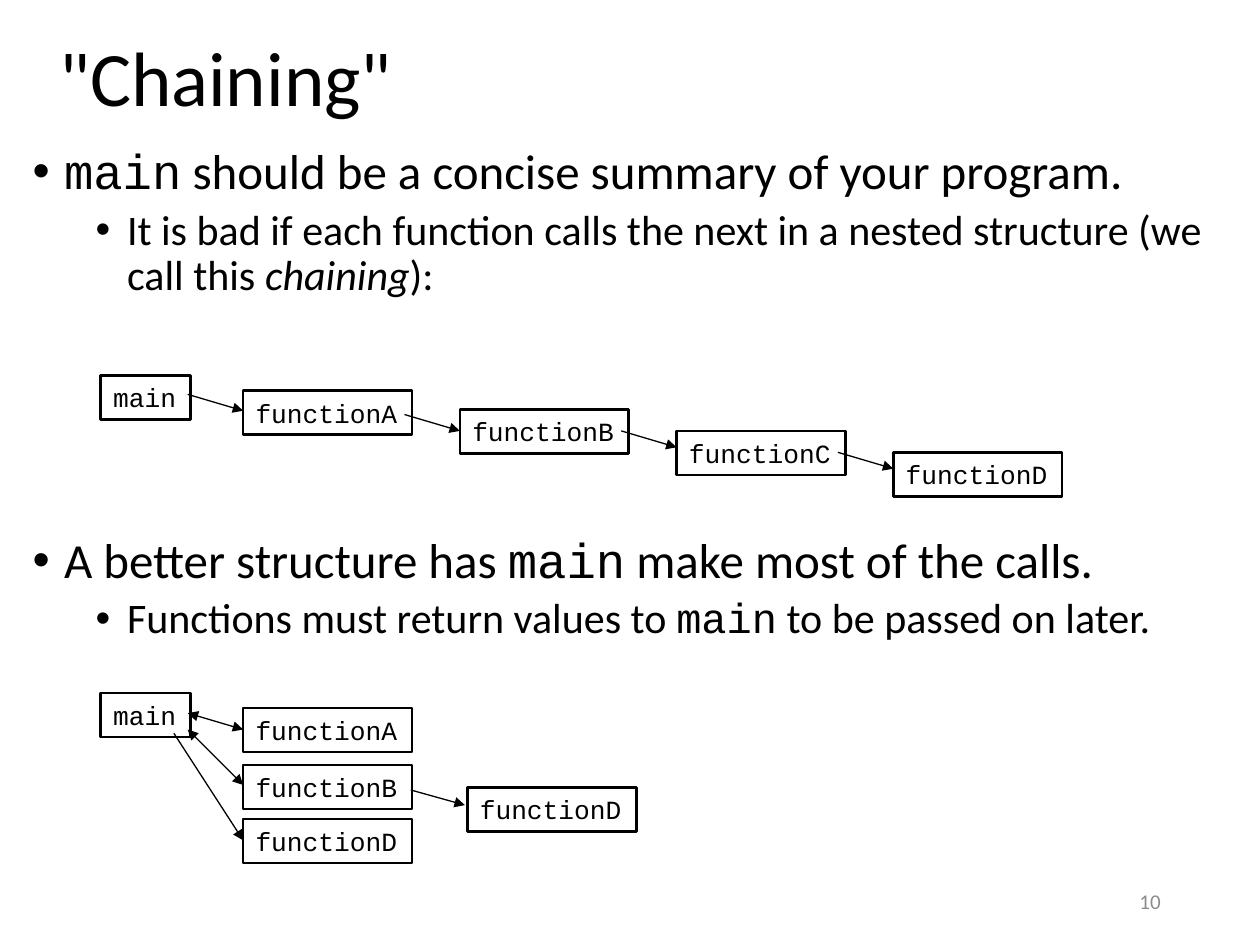
from dataclasses import dataclass

from lxml.etree import SubElement
from pptx import Presentation
from pptx.dml.color import RGBColor
from pptx.enum.shapes import MSO_CONNECTOR, MSO_SHAPE
from pptx.enum.text import MSO_ANCHOR, MSO_AUTO_SIZE, PP_ALIGN
from pptx.oxml.ns import qn
from pptx.util import Inches, Pt


@dataclass(frozen=True)
class Theme:
    ink: RGBColor = RGBColor(0, 0, 0)
    muted: RGBColor = RGBColor(0x8C, 0x8C, 0x8C)
    font: str = "Calibri"
    code_font: str = "Courier New"
    title: int = 44
    levels: tuple = (28, 24)
    code: int = 15
    number: int = 12


@dataclass(frozen=True)
class Box:
    left: float
    top: float
    width: float = 0
    height: float = 0

    def inches(self):
        return [Inches(v) for v in (self.left, self.top, self.width, self.height)]

    def point(self, across, down):
        return self.left + across, self.top + down


THEME = Theme()
NODE_HEIGHT = 0.35
MAIN_WIDTH, FUNCTION_WIDTH = 0.71, 1.34
ARROW_ACROSS, ARROW_DOWN = 0.44, 0.13
FUNCTION_COLUMN = 1.13

# Each paragraph: level, space before, spans of (text, style)
BULLETS = [
    (0, 10, [("main", "code"), (" should be a concise summary of your program.", "")]),
    (1, 5, [("It is bad if each function calls the next in a nested structure "
             "(we call this ", ""), ("chaining", "italic"), ("):", "")]),
    (0, 135, [("A better structure has ", ""), ("main", "code"),
              (" make most of the calls.", "")]),
    (1, 5, [("Functions must return values to ", ""), ("main", "code"),
            (" to be passed on later.", "")]),
]

# Name, left and top of the node, height of the arrow tip that enters it
CHAIN = [
    ("functionA", FUNCTION_COLUMN, 0.12, 0.28),
    ("functionB", 2.85, 0.27, 0.44),
    ("functionC", 4.57, 0.44, 0.57),
    ("functionD", 6.29, 0.61, 0.74),
]

HUB_NODES = [
    ("functionA", FUNCTION_COLUMN, 0.12),
    ("functionB", FUNCTION_COLUMN, 0.57),
    ("functionD", 2.91, 0.75),
    ("functionD", FUNCTION_COLUMN, 1.0),
]

# Start, end, whether the call also returns a value
HUB_CALLS = [
    ((0.69, 0.16), (FUNCTION_COLUMN, 0.29), True),
    ((0.69, 0.29), (FUNCTION_COLUMN, 0.73), True),
    ((2.46, 0.77), (2.89, 0.89), False),
    ((0.58, 0.32), (FUNCTION_COLUMN, 1.17), False),
]


def format_font(font, size, name=THEME.font, color=THEME.ink):
    font.size = Pt(size)
    font.name = name
    font.color.rgb = color


def add_title(slide, box, text):
    title = slide.shapes.title
    title.left, title.top, title.width, title.height = box.inches()
    frame = title.text_frame
    frame.text = text
    frame.vertical_anchor = MSO_ANCHOR.MIDDLE
    para = frame.paragraphs[0]
    para.alignment = PP_ALIGN.LEFT
    para.line_spacing = 0.9
    format_font(para.runs[0].font, THEME.title)


def set_bullet(para, level):
    properties = para._p.get_or_add_pPr()
    properties.set("marL", str(Inches(0.25 + 0.5 * level)))
    properties.set("indent", str(Inches(-0.25)))
    SubElement(properties, qn("a:buFont"), typeface="Arial")
    SubElement(properties, qn("a:buChar"), char="•")


def add_bullets(slide, box, bullets):
    frame = slide.shapes.add_textbox(*box.inches()).text_frame
    frame.word_wrap = True
    for index, (level, space, spans) in enumerate(bullets):
        para = frame.add_paragraph() if index else frame.paragraphs[0]
        para.level = level
        para.line_spacing = 0.9
        para.space_before = Pt(space)
        set_bullet(para, level)
        for text, style in spans:
            span = para.add_run()
            span.text = text
            name = THEME.code_font if style == "code" else THEME.font
            format_font(span.font, THEME.levels[level], name)
            span.font.italic = style == "italic"


def add_node(slide, name, left, top):
    width = MAIN_WIDTH if name == "main" else FUNCTION_WIDTH
    box = Box(left, top, width, NODE_HEIGHT)
    node = slide.shapes.add_shape(MSO_SHAPE.RECTANGLE, *box.inches())
    node.shadow.inherit = False
    node.fill.background()
    node.line.color.rgb = THEME.ink
    node.line.width = Pt(1.5)
    frame = node.text_frame
    frame.text = name
    frame.word_wrap = False
    frame.auto_size = MSO_AUTO_SIZE.SHAPE_TO_FIT_TEXT
    frame.vertical_anchor = MSO_ANCHOR.TOP
    para = frame.paragraphs[0]
    para.alignment = PP_ALIGN.LEFT
    para.space_before = Pt(3.8)
    format_font(para.runs[0].font, THEME.code, THEME.code_font)


def add_arrow(slide, start, end, both_ways=False):
    ends = [Inches(v) for v in (*start, *end)]
    arrow = slide.shapes.add_connector(MSO_CONNECTOR.STRAIGHT, *ends)
    arrow.line.color.rgb = THEME.ink
    arrow.line.width = Pt(0.75)
    line = arrow.line._get_or_add_ln()
    if both_ways:
        SubElement(line, qn("a:headEnd"), type="triangle")
    SubElement(line, qn("a:tailEnd"), type="triangle")
    SubElement(arrow._element.spPr, qn("a:effectLst"))


def add_chain(slide, box):
    """Each function calls the next one."""
    add_node(slide, "main", *box.point(0, 0))
    for name, left, top, tip in CHAIN:
        start = box.point(left - ARROW_ACROSS, tip - ARROW_DOWN)
        add_arrow(slide, start, box.point(left, tip))
        add_node(slide, name, *box.point(left, top))


def add_hub(slide, box):
    """main makes most of the calls."""
    add_node(slide, "main", *box.point(0, 0))
    for (name, left, top), (start, end, returns) in zip(HUB_NODES, HUB_CALLS):
        add_arrow(slide, box.point(*start), box.point(*end), returns)
        add_node(slide, name, *box.point(left, top))


def add_number(slide, box, text):
    frame = slide.shapes.add_textbox(*box.inches()).text_frame
    frame.word_wrap = True
    frame.vertical_anchor = MSO_ANCHOR.MIDDLE
    frame.text = text
    para = frame.paragraphs[0]
    para.alignment = PP_ALIGN.RIGHT
    format_font(para.runs[0].font, THEME.number, color=THEME.muted)


def main():
    deck = Presentation()
    deck.slide_width, deck.slide_height = Inches(10), Inches(7.5)
    slide = deck.slides.add_slide(deck.slide_layouts.get_by_name("Title Only"))
    add_title(slide, Box(0.37, 0.18, 9.23, 0.94), '"Chaining"')
    add_bullets(slide, Box(0.16, 1.12, 9.52, 6.17), BULLETS)
    add_chain(slide, Box(0.8, 2.98))
    add_hub(slide, Box(0.8, 5.5))
    add_number(slide, Box(7.06, 6.95, 2.25, 0.4), "10")
    deck.save("out.pptx")


if __name__ == "__main__":
    main()
